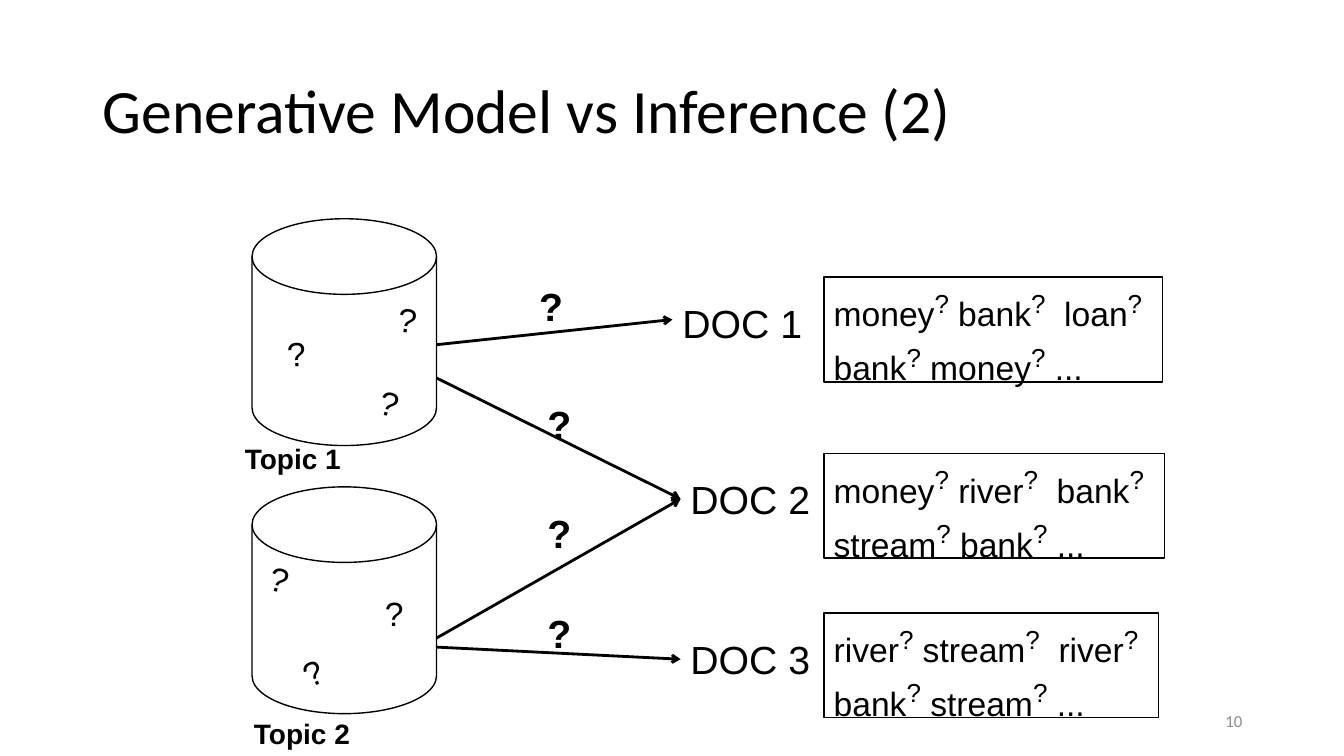
from pptx import Presentation
from pptx.dml.color import RGBColor
from pptx.enum.shapes import MSO_CONNECTOR, MSO_SHAPE
from pptx.enum.text import MSO_ANCHOR, PP_ALIGN
from pptx.oxml.ns import qn
from pptx.util import Inches, Pt
from lxml import etree

DISK = MSO_SHAPE.FLOWCHART_MAGNETIC_DISK
RECT = MSO_SHAPE.RECTANGLE
LINE = MSO_CONNECTOR.STRAIGHT
TOP, MIDDLE = MSO_ANCHOR.TOP, MSO_ANCHOR.MIDDLE
LEFT, RIGHT = PP_ALIGN.LEFT, PP_ALIGN.RIGHT


def color(code):
    return RGBColor.from_string(code)


class Board:
    ink = "000000"
    face = "Arial"

    def __init__(self, slide):
        self.slide = slide

    def style(self, font, size, bold=False, face=None, ink=None):
        font.name = face or self.face
        font.size = Pt(size)
        font.bold = bold
        font.color.rgb = color(ink or self.ink)

    def text(self, words, box, size, bold=False, face=None, ink=None,
             wrap=False, anchor=TOP, align=LEFT, turn=0):
        item = self.slide.shapes.add_textbox(*map(Inches, box))
        item.rotation = turn
        frame = item.text_frame
        frame.word_wrap = wrap
        frame.vertical_anchor = anchor
        para = frame.paragraphs[0]
        para.text = words
        para.alignment = align
        self.style(para.font, size, bold, face, ink)
        return para

    def shape(self, kind, box, width):
        item = self.slide.shapes.add_shape(kind, *map(Inches, box))
        item.shadow.inherit = False
        item.fill.background()
        item.line.color.rgb = color(self.ink)
        item.line.width = Pt(width)
        return item

    def arrow(self, start, end):
        item = self.slide.shapes.add_connector(
            LINE, *map(Inches, start + end))
        item.line.color.rgb = color(self.ink)
        item.line.width = Pt(2)
        etree.SubElement(item.line._get_or_add_ln(), qn("a:tailEnd"),
                         type="arrow")
        etree.SubElement(item._element.spPr, qn("a:effectLst"))

    def words(self, lines, box):
        """Framed words; each question mark is raised."""
        frame = self.shape(RECT, box, 1.25).text_frame
        frame.word_wrap = False
        frame.vertical_anchor = TOP
        para = frame.paragraphs[0]
        para.alignment = LEFT
        self.style(para.font, 24)
        for row, line in enumerate(lines):
            if row:
                para.add_line_break()
            *marked, rest = line.split("?")
            for word in marked:
                para.add_run().text = word
                mark = para.add_run()
                mark.text = "?"
                mark.font.size = Pt(32)
                mark.font._element.set("baseline", "30000")
            if rest:
                para.add_run().text = rest


def main():
    deck = Presentation()
    deck.slide_width, deck.slide_height = Inches(13.33), Inches(7.5)
    board = Board(deck.slides.add_slide(deck.slide_layouts[6]))

    # Title
    title = board.text("Generative Model vs Inference (2)",
                       (0.92, 0.4, 11.5, 1.45), 44, face="Calibri",
                       wrap=True, anchor=MIDDLE)
    title.line_spacing = 0.9

    # Topics
    for name, left, top, disk in (("Topic 1", 2.33, 4.33, 2.17),
                                  ("Topic 2", 2.42, 7.06, 4.83)):
        board.text(name, (left, top, 1.16, 0.44), 20, bold=True)
        board.shape(DISK, (2.5, disk, 1.83, 2.25), 1)

    # Unknown words in the topics
    for left, top, turn in ((3.67, 3.75, 15), (3.85, 2.92, 8),
                            (2.75, 3.25, -5), (2.58, 5.5, 15),
                            (3.72, 5.83, 0), (2.91, 6.42, -25)):
        board.text("?", (left, top, 0.4, 0.5), 24, turn=turn)

    # Arrows from topics to documents
    for start, end, mark in (
            ((4.33, 3.42), (6.67, 3.17), (5.25, 2.75)),
            ((4.33, 6.42), (6.75, 6.54), (5.33, 6)),
            ((4.33, 6.33), (6.75, 4.95), (5.33, 5)),
            ((4.33, 3.75), (6.75, 4.95), (5.33, 3.92))):
        board.arrow(start, end)
        board.text("?", mark + (0.44, 0.57), 28, bold=True)

    # Documents
    docs = (
        (6.67, 2.92, 2.75, 3.36,
         ("money? bank?  loan?", "bank? money? ...")),
        (6.75, 4.67, 4.5, 3.38,
         ("money? river?  bank?", "stream? bank? ...")),
        (6.75, 6.25, 6.08, 3.32,
         ("river? stream?  river?", "bank? stream? ...")))
    for num, (left, top, edge, width, lines) in enumerate(docs, 1):
        board.text(f"DOC {num}", (left, top, 1.53, 0.57), 28, wrap=True)
        board.words(lines, (8.17, edge, width, 1.04))

    # Page number
    board.text("10", (9.42, 6.95, 3, 0.4), 12, face="Calibri", ink="8C8C8C",
               wrap=True, anchor=MIDDLE, align=RIGHT)

    deck.save("out.pptx")


if __name__ == "__main__":
    main()
